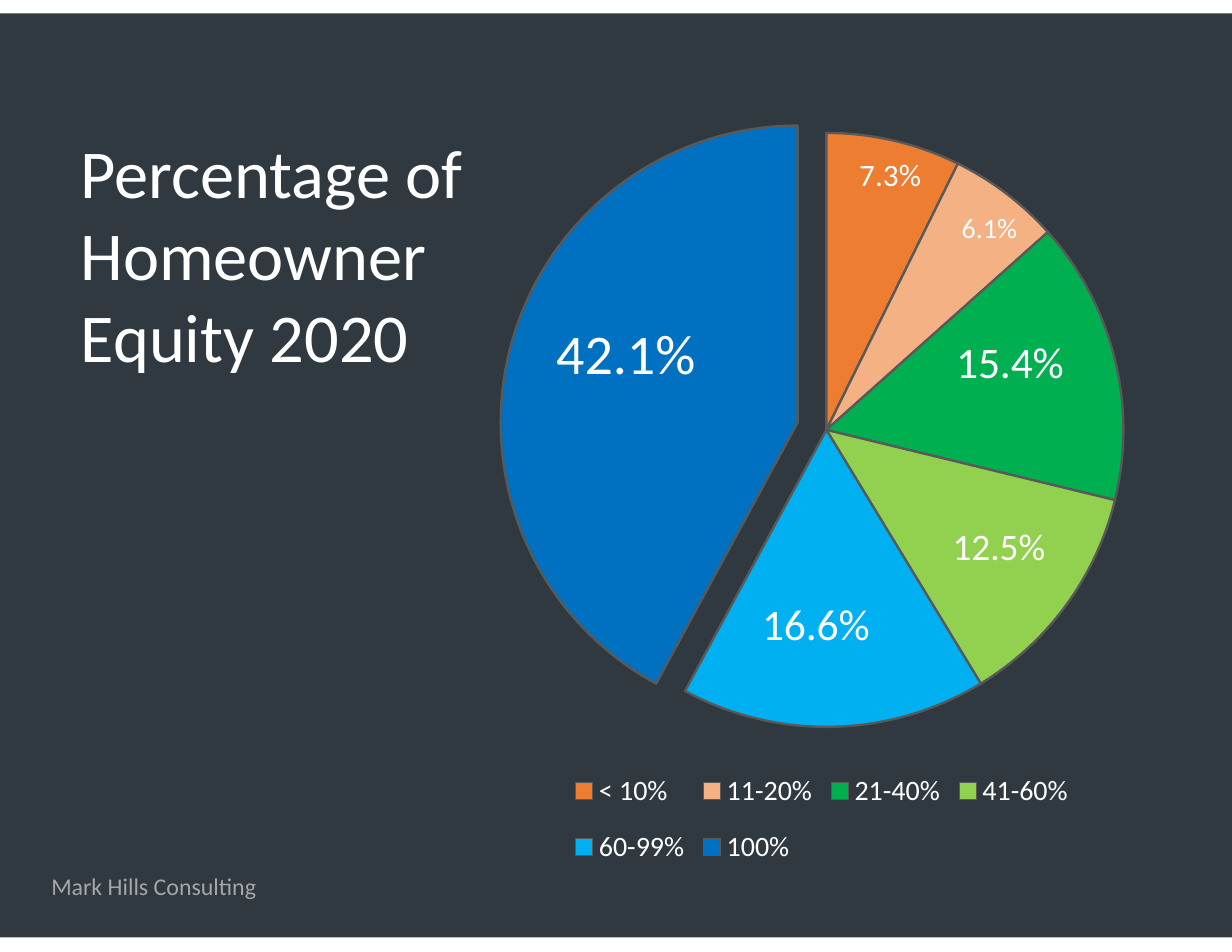
from lxml import etree
from pptx import Presentation
from pptx.chart.data import CategoryChartData
from pptx.dml.color import RGBColor
from pptx.enum.chart import XL_CHART_TYPE, XL_LABEL_POSITION as LabelPos, XL_LEGEND_POSITION as LegendPos
from pptx.enum.shapes import MSO_SHAPE
from pptx.enum.text import MSO_ANCHOR, MSO_AUTO_SIZE, PP_ALIGN
from pptx.oxml import parse_xml
from pptx.oxml.ns import nsdecls, qn
from pptx.util import Inches, Pt

FONT = "Calibri"
SLATE = RGBColor(0x2F, 0x39, 0x3F)
WHITE = RGBColor(0xFF, 0xFF, 0xFF)
GRAY = RGBColor(0xA6, 0xA6, 0xA6)
OUTLINE = RGBColor(0x59, 0x59, 0x59)
ORANGE = RGBColor(0xED, 0x7D, 0x31)
PEACH = RGBColor(0xF4, 0xB1, 0x83)
GREEN = RGBColor(0x00, 0xB0, 0x50)
LIME = RGBColor(0x92, 0xD0, 0x50)
SKY = RGBColor(0x00, 0xB0, 0xF0)
BLUE = RGBColor(0x00, 0x70, 0xC0)

# equity band, share of homeowners, slice colour, label size, label offset
EQUITY = [
    ("< 10%", 0.073, ORANGE, 20, None),
    ("11-20%", 0.061, PEACH, 18, None),
    ("21-40%", 0.154, GREEN, 28, (-0.18, 0.04)),
    ("41-60%", 0.125, LIME, 24, (-0.13, -0.1)),
    ("60-99%", 0.166, SKY, 28, (-0.02, -0.16)),
    ("100%", 0.421, BLUE, 36, (0.21, 0.05)),
]


def write(shape, text, *, size, color):
    """Fill a shape with left-aligned text, one paragraph per line."""
    frame = shape.text_frame
    frame.text = text
    frame.word_wrap = False
    frame.auto_size = MSO_AUTO_SIZE.SHAPE_TO_FIT_TEXT
    frame.vertical_anchor = MSO_ANCHOR.TOP
    for paragraph in frame.paragraphs:
        paragraph.alignment = PP_ALIGN.LEFT
        for run in paragraph.runs:
            run.font.name, run.font.size = FONT, Pt(size)
            run.font.color.rgb = color


def manual_layout(values, modes=""):
    """Return a layout element; values are fractions of the chart area."""
    sides = "".join(f'<c:{side} val="{value}"/>' for side, value in zip("xywh", values))
    return parse_xml(f'<c:layout {nsdecls("c")}><c:manualLayout>{modes}{sides}'
                     '</c:manualLayout></c:layout>')


prs = Presentation()
prs.slide_width, prs.slide_height = Inches(11), Inches(8.5)
slide = prs.slides.add_slide(prs.slide_layouts[5])
shapes = slide.shapes

# Dark backdrop
backdrop = shapes.add_shape(MSO_SHAPE.RECTANGLE, 0, Inches(0.12), Inches(11), Inches(8.25))
backdrop.shadow.inherit = False
backdrop.fill.solid()
backdrop.fill.fore_color.rgb = SLATE
backdrop.line.fill.background()

# Equity pie
equity_data = CategoryChartData(number_format="0.0%")
equity_data.categories = [band for band, *_ in EQUITY]
equity_data.add_series("Series 1", [share for _, share, *_ in EQUITY])
chart = shapes.add_chart(XL_CHART_TYPE.PIE, Inches(3.09), Inches(0.44),
                         Inches(8.17), Inches(7.47), equity_data).chart
chart.has_title = False
chart.font.name, chart.font.size = FONT, Pt(10)
chart.font.color.rgb = WHITE

pie = chart.plots[0]
pie.vary_by_categories = True
pie.has_data_labels = True
labels = pie.data_labels
labels.show_value = True
labels.show_percentage = False
labels.number_format, labels.number_format_is_linked = "0.0%", False
labels.position = LabelPos.BEST_FIT

for index, (_, _, color, label_size, offset) in enumerate(EQUITY):
    point = pie.series[0].points[index]
    point.format.fill.solid()
    point.format.fill.fore_color.rgb = color
    point.format.line.color.rgb = OUTLINE
    point.format.line.width = Pt(1.5)
    label = point.data_label
    label.font.name, label.font.size = FONT, Pt(label_size)
    label.font.color.rgb = WHITE
    label.position = LabelPos.BEST_FIT
    if offset:
        label_part = chart.element.findall(".//" + qn("c:dLbl"))[-1]
        label_part.find(qn("c:idx")).addnext(manual_layout(offset))

for leader_lines in chart.element.iter(qn("c:showLeaderLines")):
    leader_lines.set("val", "0")

# Pull the fully paid slice out of the pie
paid_slice = chart.element.findall(".//" + qn("c:dPt"))[-1]
explosion = etree.Element(qn("c:explosion"), val="10")
paid_slice.find(qn("c:spPr")).addprevious(explosion)

chart.has_legend = True
legend = chart.legend
legend.position = LegendPos.BOTTOM
legend.include_in_layout = False
legend.font.name, legend.font.size = FONT, Pt(18)
legend.font.color.rgb = WHITE

# Place the pie and the legend within the chart area
EDGES = '<c:xMode val="edge"/><c:yMode val="edge"/>'
plot_area = chart.element.find(".//" + qn("c:plotArea"))
legend_part = chart.element.find(".//" + qn("c:legend"))
for part, position, modes, box in [
    (plot_area, 0, '<c:layoutTarget val="inner"/>' + EDGES, (0.2, 0.1, 0.65, 0.71)),
    (legend_part, 1, EDGES, (0.24, 0.84, 0.56, 0.16)),
]:
    for old_layout in part.findall(qn("c:layout")):
        part.remove(old_layout)
    part.insert(position, manual_layout(box, modes))

# Title, brought in front of the backdrop
title = shapes.title
title.left, title.top, title.width, title.height = map(Inches, (0.62, 1.11, 3.79, 2.32))
write(title, "Percentage of\nHomeowner\nEquity 2020", size=44, color=WHITE)
title.element.getparent().append(title.element)

credit = shapes.add_textbox(Inches(0.36), Inches(7.73), Inches(2.14), Inches(0.36))
write(credit, "Mark Hills Consulting", size=15.4, color=GRAY)

prs.save("out.pptx")
